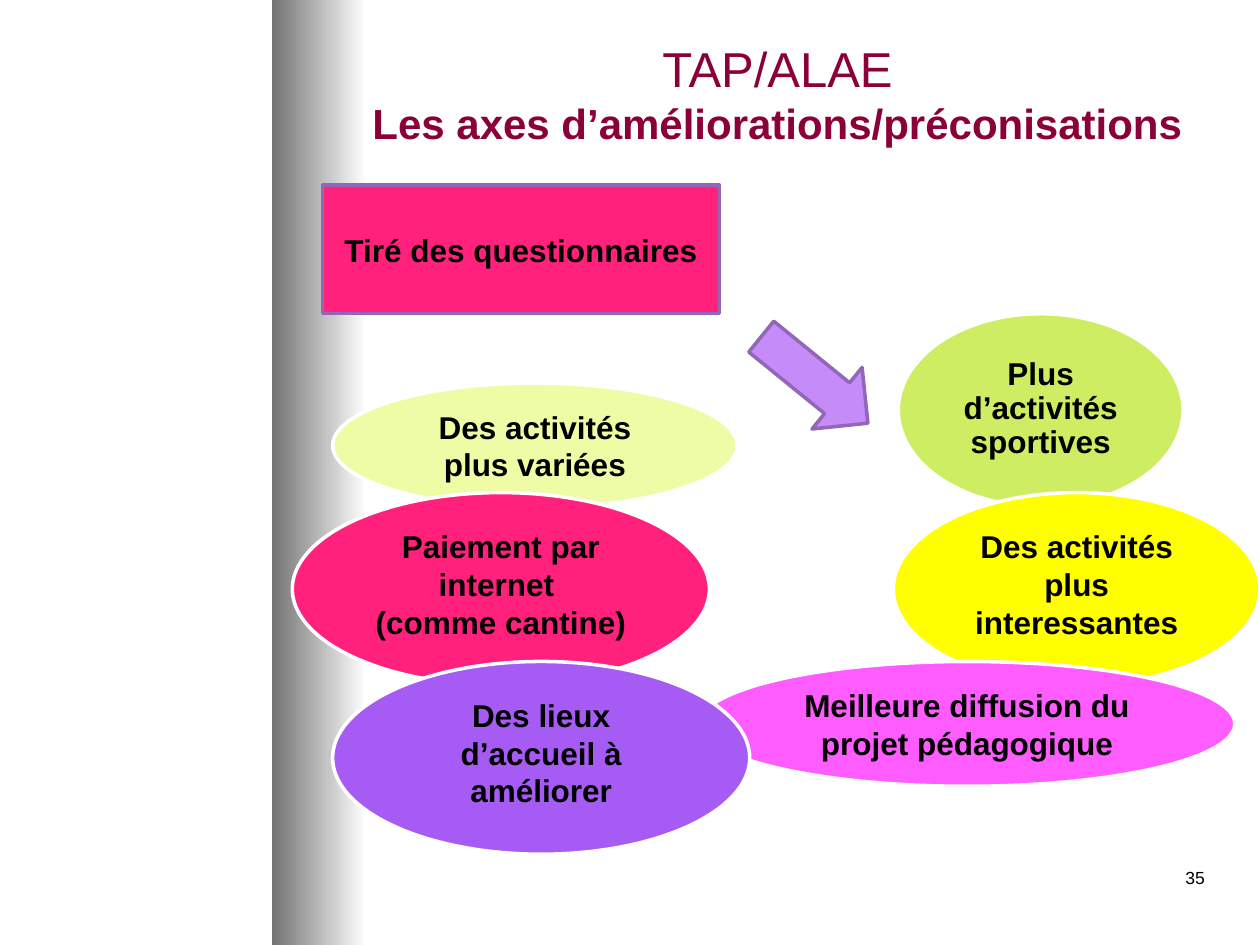
import pptx
import pptx.util
import pptx.dml.color
import pptx.enum.shapes
import pptx.enum.text

Inches = pptx.util.Inches
Pt = pptx.util.Pt
SHAPE = pptx.enum.shapes.MSO_SHAPE
ALIGN = pptx.enum.text.PP_ALIGN
ANCHOR = pptx.enum.text.MSO_ANCHOR

FONT = "Arial"
BLACK, WHITE = "000000", "FFFFFF"
PINK, PURPLE, TITLE_COLOR = "FF217B", "9267B8", "8C0039"


def rgb(value):
    return pptx.dml.color.RGBColor.from_string(value)


class SlideBuilder:
    def __init__(self, slide):
        self.slide = slide

    def style_run(self, r, size, color=BLACK, bold=False):
        r.font.name = FONT
        r.font.size = Pt(size)
        r.font.bold = bold
        r.font.color.rgb = rgb(color)

    def fill_text(self, tf, text, size=18, bold=True, align=ALIGN.CENTER,
                  anchor=ANCHOR.TOP, spacing=None):
        tf.word_wrap = True
        tf.vertical_anchor = anchor
        tf.text = text
        for p in tf.paragraphs:
            p.alignment = align
            if spacing:
                p.line_spacing = spacing
            for r in p.runs:
                self.style_run(r, size, bold=bold)

    def title(self, heading, subheading, box):
        sp = self.slide.shapes.title
        sp.left, sp.top, sp.width, sp.height = map(Inches, box)
        tf = sp.text_frame
        tf.text = f"{heading}\v{subheading}"
        tf.word_wrap = True
        tf.vertical_anchor = ANCHOR.MIDDLE
        p = tf.paragraphs[0]
        p.alignment = ALIGN.CENTER
        self.style_run(p.runs[0], 28, TITLE_COLOR)
        self.style_run(p.runs[1], 24, TITLE_COLOR, bold=True)

    def shape(self, kind, box, fill, line=WHITE, text=None, anchor=ANCHOR.TOP):
        sp = self.slide.shapes.add_shape(kind, *map(Inches, box))
        sp.shadow.inherit = False
        sp.fill.solid()
        sp.fill.fore_color.rgb = rgb(fill)
        sp.line.color.rgb = rgb(line)
        sp.line.width = Pt(2)
        if text:
            self.fill_text(sp.text_frame, text, anchor=anchor)
        return sp

    def gradient_band(self, box, start, end):
        sp = self.slide.shapes.add_shape(SHAPE.RECTANGLE, *map(Inches, box))
        sp.shadow.inherit = False
        sp.line.fill.background()
        sp.fill.gradient()
        sp.fill.gradient_angle = 0
        for stop, color in zip(sp.fill.gradient_stops, (start, end)):
            stop.color.rgb = rgb(color)

    def text_box(self, box, text, margin=None, **style):
        tf = self.slide.shapes.add_textbox(*map(Inches, box)).text_frame
        if margin is not None:
            tf.margin_left = tf.margin_right = Inches(margin)
            tf.margin_top = tf.margin_bottom = Inches(margin)
        self.fill_text(tf, text, **style)


def main():
    prs = pptx.Presentation()
    prs.slide_width, prs.slide_height = Inches(10), Inches(7.5)
    s = SlideBuilder(prs.slides.add_slide(prs.slide_layouts[5]))

    # Side band, page number and title
    s.gradient_band((2.16, 0, 0.75, 7.5), "737373", WHITE)
    s.text_box((7.58, 6.83, 2.08, 0.5), "35", size=10, bold=False,
               align=ALIGN.RIGHT)
    s.title("TAP/ALAE", "Les axes d’améliorations/préconisations",
            (2.67, 0.25, 7, 0.98))

    # Upper proposals
    s.shape(SHAPE.OVAL, (2.64, 3.04, 3.21, 0.99), "EEFDA5",
            text="Des activités plus variées", anchor=ANCHOR.MIDDLE)
    s.shape(SHAPE.OVAL, (7.13, 2.49, 2.26, 1.53), "CFED63")
    s.text_box((7.46, 2.71, 1.6, 1.08), "Plus d’activités sportives",
               margin=0.01, anchor=ANCHOR.MIDDLE, spacing=0.9)

    # Middle and lower proposals, back to front
    proposals = [
        ((7.09, 3.91, 2.91, 1.53), "FFFF00", "Des activités plus interessantes"),
        ((2.32, 3.91, 3.31, 1.53), PINK, "Paiement par internet \n(comme cantine)"),
        ((5.55, 5.25, 4.25, 0.99), "FF5CFF",
         "Meilleure diffusion du projet pédagogique"),
    ]
    for box, fill, text in proposals:
        s.shape(SHAPE.OVAL, box, fill, text=text)

    # Source of the proposals and its arrow
    s.shape(SHAPE.RECTANGLE, (2.56, 1.47, 3.15, 1.02), PINK, PURPLE,
            "Tiré des questionnaires", ANCHOR.MIDDLE)
    arrow = s.shape(SHAPE.DOWN_ARROW, (6.15, 2.47, 0.63, 1.09), "C58BF9", PURPLE)
    arrow.rotation = 309.1

    # Front proposal
    s.shape(SHAPE.OVAL, (2.64, 5.25, 3.31, 1.53), "A65BF4",
            text="Des lieux d’accueil à améliorer")

    prs.save("out.pptx")


if __name__ == "__main__":
    main()
